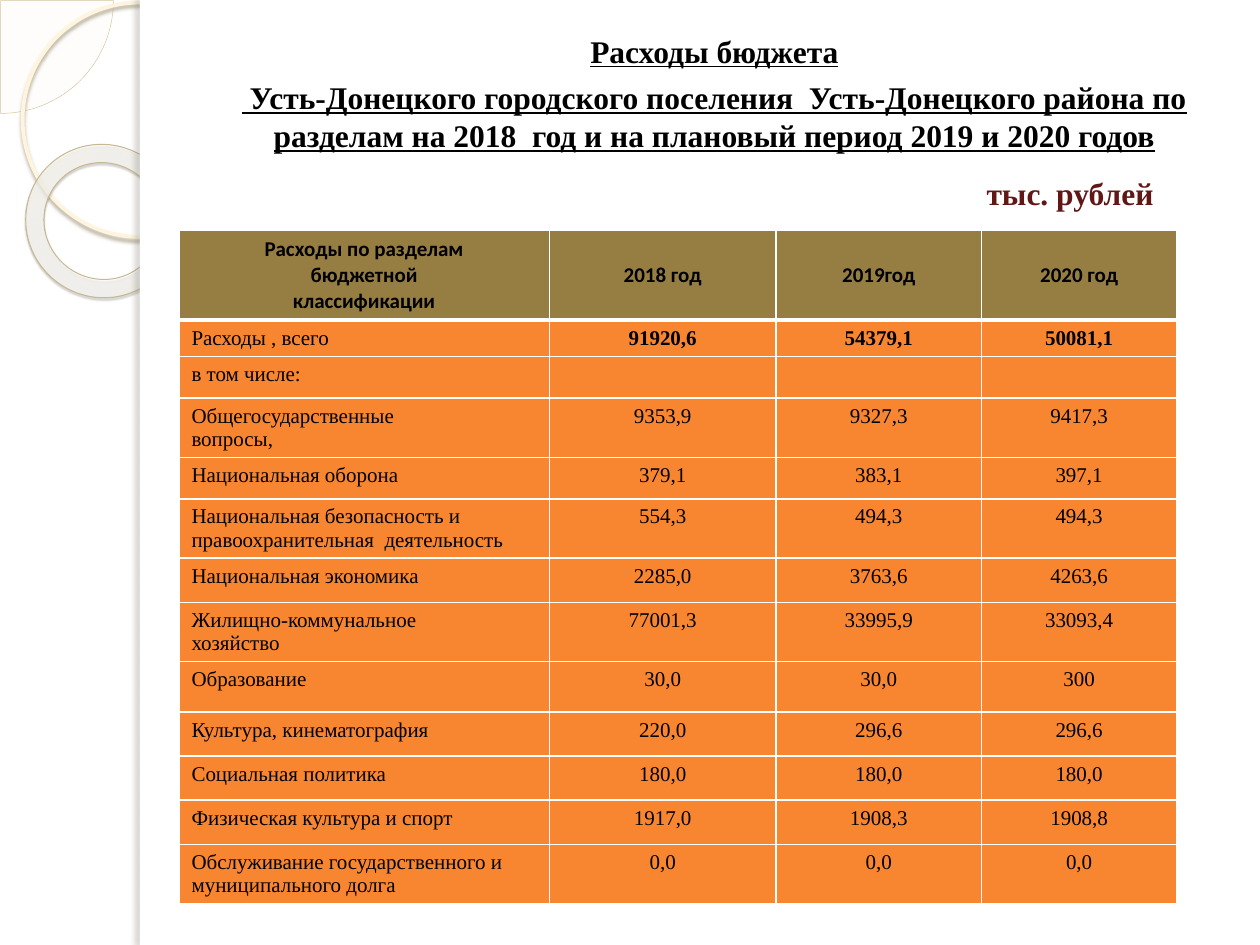
from lxml import etree
from pptx import Presentation
from pptx.dml.color import RGBColor as RGB
from pptx.enum.shapes import MSO_SHAPE as Kind
from pptx.enum.text import MSO_ANCHOR as Anchor, MSO_AUTO_SIZE as Auto, PP_ALIGN as Align
from pptx.oxml import parse_xml
from pptx.oxml.ns import nsdecls, qn
from pptx.util import Inches, Pt

HUES = {
    "white": "FFFFFF", "black": "000000", "wine": "621717",
    "head": "967D42", "row": "F88631",
    "pie": "FEFAF4", "edge": "D3C39F", "ring": "FFF5DE", "rim": "C7B893",
}
SERIF, SANS = "Times New Roman", "Calibri"
TITLE = [
    "Расходы бюджета",
    " Усть-Донецкого городского поселения  Усть-Донецкого района по "
    "разделам на 2018  год и на плановый период 2019 и 2020 годов",
]
ROWS = [
    (0.71, "Расходы по разделам\nбюджетной\nклассификации", "2018 год", "2019год", "2020 год"),
    (0.29, "Расходы , всего", "91920,6", "54379,1", "50081,1"),
    (0.33, "в том числе:", "", "", ""),
    (0.47, "Общегосударственные\nвопросы,", "9353,9", "9327,3", "9417,3"),
    (0.33, "Национальная оборона", "379,1", "383,1", "397,1"),
    (0.47, "Национальная безопасность и правоохранительная  деятельность",
     "554,3", "494,3", "494,3"),
    (0.35, "Национальная экономика", "2285,0", "3763,6", "4263,6"),
    (0.47, "Жилищно-коммунальное\nхозяйство", "77001,3", "33995,9", "33093,4"),
    (0.4, "Образование", "30,0", "30,0", "300"),
    (0.35, "Культура, кинематография", "220,0", "296,6", "296,6"),
    (0.35, "Социальная политика", "180,0", "180,0", "180,0"),
    (0.35, "Физическая культура и спорт", "1917,0", "1908,3", "1908,8"),
    (0.47, "Обслуживание государственного и муниципального долга", "0,0", "0,0", "0,0"),
]
COLS = [2.94, 1.8, 1.63, 1.55]


def tint(hue, alpha):
    return f'<a:srgbClr val="{hue}"><a:alpha val="{alpha * 1000}"/></a:srgbClr>'


class Deck:
    def __init__(self):
        self.prs = Presentation()
        self.prs.slide_width, self.prs.slide_height = Inches(10), Inches(7.5)
        self.slide = self.prs.slides.add_slide(self.prs.slide_layouts[5])
        self.shapes = self.slide.shapes

    def paint(self, fill, hue):
        fill.solid()
        fill.fore_color.rgb = RGB.from_string(HUES[hue])

    def text(self, frame, lines, hue="black", align=Align.LEFT, **style):
        for i, line in enumerate(lines):
            para = frame.add_paragraph() if i else frame.paragraphs[0]
            para.alignment = align
            if not line:
                etree.SubElement(para._p, qn("a:endParaRPr"), sz=str(style["size"].centipoints))
                continue
            run = para.add_run()
            run.text = line
            run.font.color.rgb = RGB.from_string(HUES[hue])
            for key, val in style.items():
                setattr(run.font, key, val)

    def shape(self, kind, box, fill=None, line=None, adj=(), turn=0, shade=None):
        item = self.shapes.add_shape(kind, *map(Inches, box))
        item.shadow.inherit = False
        item.rotation = turn
        for i, val in enumerate(adj):
            item.adjustments[i] = val
        if fill:
            self.paint(item.fill, fill)
        else:
            item.fill.background()
        if line:
            self.paint(item.line.fill, line[0])
            item.line.width = Pt(line[1])
        else:
            item.line.fill.background()
        if shade:
            hue, alpha, blur, dist, way = shade
            item.element.spPr.find(qn("a:effectLst")).append(parse_xml(
                f'<a:outerShdw {nsdecls("a")} blurRad="{Pt(blur)}" dist="{Pt(dist)}" '
                f'dir="{way * 60000}" algn="tl" rotWithShape="0">{tint(hue, alpha)}</a:outerShdw>'))
        return item

    def fade(self, item, xml):
        props = item.element.spPr
        old = next(e for e in props if e.tag in (qn("a:noFill"), qn("a:solidFill")))
        props.replace(old, parse_xml(xml))

    def title(self, lines, box):
        item = self.shapes.title
        for key, val in zip(("left", "top", "width", "height"), box):
            setattr(item, key, Inches(val))
        frame = item.text_frame
        form = {"word_wrap": True, "auto_size": Auto.NONE,
                "vertical_anchor": Anchor.TOP, "margin_top": Inches(0.25)}
        for key, val in form.items():
            setattr(frame, key, val)
        self.text(frame, lines, align=Align.CENTER, name=SERIF, size=Pt(18),
                  bold=True, underline=True)
        first, rest = frame.paragraphs
        first._p.get_or_add_pPr().set("marL", str(Inches(0.14)))
        rest.space_before, rest.line_spacing = Pt(5), Pt(21.7)
        item.element.getparent().append(item.element)

    def label(self, text, box):
        frame = self.shapes.add_textbox(*map(Inches, box)).text_frame
        frame.word_wrap = False
        frame.margin_left = Inches(0.16)
        self.text(frame, [text], "wine", name=SERIF, size=Pt(18), bold=True)

    def edges(self, cell, row):
        wide = {"T": 3 if row == 1 else 1, "B": 1 if row else 3}
        for side in "LRTB":
            cell._tc.get_or_add_tcPr().append(parse_xml(
                f'<a:ln{side} {nsdecls("a")} w="{Pt(wide.get(side, 1))}"><a:solidFill>'
                f'<a:srgbClr val="{HUES["white"]}"/></a:solidFill></a:ln{side}>'))

    def table(self, rows, cols, left, top):
        high = sum(row[0] for row in rows)
        grid = self.shapes.add_table(len(rows), len(cols), *map(
            Inches, (left, top, sum(cols), high))).table
        for col, wide in zip(grid.columns, cols):
            col.width = Inches(wide)
        for r, (tall, *texts) in enumerate(rows):
            grid.rows[r].height = Inches(tall)
            for c, text in enumerate(texts):
                cell = grid.cell(r, c)
                self.edges(cell, r)
                self.paint(cell.fill, "row" if r else "head")
                cell.vertical_anchor = Anchor.TOP if r else Anchor.MIDDLE
                self.text(cell.text_frame, text.split("\n"),
                          align=Align.LEFT if r and not c else Align.CENTER,
                          name=SERIF if r else SANS, size=Pt(12),
                          bold=r == 0 or (r == 1 and c > 0))


def main():
    deck = Deck()
    pie = deck.shape(Kind.PIE, (-0.89, -0.89, 1.79, 1.79), "pie", ("edge", 0.25), (0, 54.02))
    deck.fade(pie, f'<a:solidFill {nsdecls("a")}>{tint(HUES["pie"], 33)}</a:solidFill>')
    deck.shape(Kind.OVAL, (0.18, 0.02, 1.86, 1.86), line=("ring", 2.15),
               shade=("B0A68F", 85, 2, 2, 90))
    donut = deck.shape(Kind.DONUT, (0.2, 1.15, 1.23, 1.21), line=("rim", 0.58),
                       adj=(0.12,), turn=38.6, shade=("5A5444", 35, 1, 1.2, 75))
    stops = "".join(f'<a:gs pos="{pos * 1000}">{tint(hue, alpha)}</a:gs>' for pos, hue, alpha in
                    ((0, "FFFCF6", 70), (70, "FFFEFB", 55), (100, "F0D28E", 60)))
    deck.fade(donut, f'<a:gradFill {nsdecls("a")}><a:gsLst>{stops}</a:gsLst><a:path path="circle">'
                     '<a:fillToRect l="-408000" t="-50000" r="508000" b="150000"/>'
                     '</a:path></a:gradFill>')
    deck.shape(Kind.RECTANGLE, (1.11, 0, 8.89, 7.5), "white")
    deck.shape(Kind.RECTANGLE, (1.11, 0, 0.08, 7.5), "white", shade=("736F63", 25, 3, 3, 180))
    deck.title(TITLE, (1.5, 0, 8.2, 1.28))
    deck.table(ROWS, COLS, 1.42, 1.83)
    deck.label("тыс. рублей", (7.67, 1.33, 1.67, 0.4))
    deck.prs.save("out.pptx")


if __name__ == "__main__":
    main()
